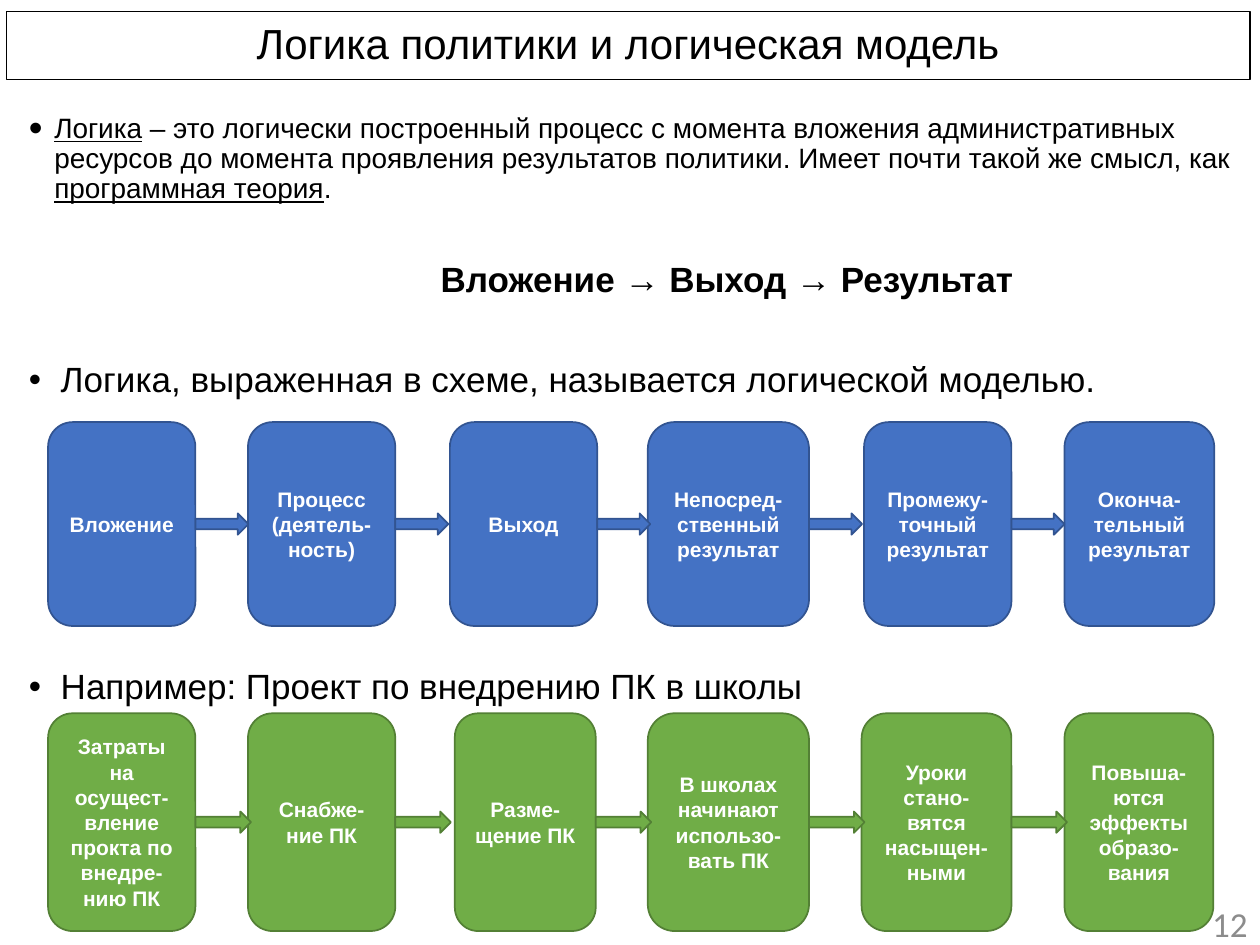
from dataclasses import dataclass
from itertools import pairwise

from lxml.etree import SubElement
from pptx import Presentation
from pptx.dml.color import RGBColor
from pptx.enum.shapes import MSO_SHAPE as Shape
from pptx.enum.text import MSO_ANCHOR as Anchor, MSO_AUTO_SIZE as AutoSize, PP_ALIGN as Align
from pptx.oxml.ns import qn
from pptx.util import Cm, Pt


@dataclass(frozen=True)
class Theme:
    text: str = "000000"
    on_card: str = "FFFFFF"
    page_number: str = "8C8C8C"
    blue: str = "4472C4"
    blue_edge: str = "325491"
    green: str = "70AD47"
    green_edge: str = "538035"
    font: str = "Arial"
    number_font: str = "Calibri"
    title_size: int = 24
    heading_size: int = 20
    definition_size: int = 16
    card_size: int = 12
    line_spacing: float = 0.9


@dataclass(frozen=True)
class Card:
    label: str
    left: float
    width: float = 2.97


@dataclass(frozen=True)
class Chain:
    """A row of cards joined by block arrows; lengths in centimetres."""
    top: float
    height: float
    fill: str
    edge: str
    arrow_width: float
    cards: tuple[Card, ...]


THEME = Theme()
ARROW_HEIGHT = 0.43

MODEL = Chain(8.51, 4.11, THEME.blue, THEME.blue_edge, 1.07, (
    Card("Вложение", 0.97),
    Card("Процесс\n(деятель-\nность)", 5),
    Card("Выход", 9.07),
    Card("Непосред-ственный результат", 13.06, 3.25),
    Card("Промежу-точный результат", 17.42),
    Card("Оконча-тельный результат", 21.46, 3.02),
))
EXAMPLE = Chain(14.38, 4.39, THEME.green, THEME.green_edge, 1.12, (
    Card("Затраты на осущест-вление прокта по внедре-нию ПК", 0.97),
    Card("Снабже-ние ПК", 5),
    Card("Разме-щение ПК", 9.17, 2.84),
    Card("В школах начинают использо-вать ПК", 13.06, 3.25),
    Card("Уроки стано-вятся насыщен-ными", 17.37, 3.02),
    Card("Повыша-ются эффекты образо-вания", 21.46, 3),
))
DEFINITION = (
    ("Логика", True),
    (" – это логически построенный процесс с момента вложения административных "
     "ресурсов до момента проявления результатов политики. "
     "Имеет почти такой же смысл, как ", False),
    ("программная теория", True),
    (".", False),
)


def add_text(paragraph, text: str, *, size: int, color: str = THEME.text,
             font: str = THEME.font, bold: bool = False, underline: bool = False) -> None:
    for index, line in enumerate(text.split("\n")):
        if index:
            paragraph.add_line_break()
        run = paragraph.add_run()
        run.text = line
        run.font.size = Pt(size)
        run.font.name = font
        run.font.bold = bold
        run.font.underline = underline
        run.font.color.rgb = RGBColor.from_string(color)


def place(shape, left: float, top: float, width: float, height: float) -> None:
    shape.left, shape.top, shape.width, shape.height = map(Cm, (left, top, width, height))


def set_layout(paragraph, *, before: float = 0, left: float = 0, hanging: float = 0,
               bullet_percent: int = 0) -> None:
    """Set spacing and indents; a bullet is shown when bullet_percent is not zero."""
    paragraph.line_spacing = THEME.line_spacing
    paragraph.space_before = Pt(before)
    properties = paragraph._p.get_or_add_pPr()
    properties.set("marL", str(Cm(left)))
    properties.set("indent", str(-Cm(hanging)))
    if bullet_percent:
        SubElement(properties, qn("a:buSzPct"), val=str(bullet_percent * 1000))
        SubElement(properties, qn("a:buFont"), typeface=THEME.font)
        SubElement(properties, qn("a:buChar"), char="•")
    else:
        SubElement(properties, qn("a:buNone"))


def add_block(slide, kind: Shape, chain: Chain, left: float, width: float, height: float):
    """Add a shape in the chain's colours, centred on the chain's axis."""
    top = chain.top + (chain.height - height) / 2
    block = slide.shapes.add_shape(kind, *map(Cm, (left, top, width, height)))
    block.shadow.inherit = False
    block.fill.solid()
    block.fill.fore_color.rgb = RGBColor.from_string(chain.fill)
    block.line.color.rgb = RGBColor.from_string(chain.edge)
    block.line.width = Pt(1)
    return block


def draw_chain(slide, chain: Chain) -> None:
    for card in chain.cards:
        block = add_block(slide, Shape.ROUNDED_RECTANGLE, chain,
                          card.left, card.width, chain.height)
        frame = block.text_frame
        frame.word_wrap = True
        frame.vertical_anchor = Anchor.MIDDLE
        label = frame.paragraphs[0]
        label.alignment = Align.CENTER
        add_text(label, card.label, size=THEME.card_size, color=THEME.on_card, bold=True)
    for card, _ in pairwise(chain.cards):
        add_block(slide, Shape.RIGHT_ARROW, chain,
                  card.left + card.width, chain.arrow_width, ARROW_HEIGHT)


def fill_title(title) -> None:
    place(title, 0.13, 0.23, 25.07, 1.37)
    title.line.color.rgb = RGBColor.from_string(THEME.text)
    title.line.width = Pt(0.75)
    frame = title.text_frame
    frame.auto_size = AutoSize.NONE
    frame.vertical_anchor = Anchor.MIDDLE
    heading = frame.paragraphs[0]
    heading.alignment = Align.CENTER
    heading.line_spacing = THEME.line_spacing
    add_text(heading, "Логика политики и логическая модель", size=THEME.title_size)


def fill_body(body) -> None:
    place(body, 0.33, 1.93, 25.07, 15.7)
    frame = body.text_frame
    frame.auto_size = AutoSize.NONE
    frame.margin_top = Cm(0.37)

    definition = frame.paragraphs[0]
    set_layout(definition, left=0.51, hanging=0.51, bullet_percent=140)
    for text, underline in DEFINITION:
        add_text(definition, text, size=THEME.definition_size, underline=underline)

    formula = frame.add_paragraph()
    formula.alignment = Align.CENTER
    set_layout(formula, before=33, left=3.58)
    add_text(formula, "Вложение → Выход → Результат", size=THEME.heading_size, bold=True)

    for text, before in (
        ("Логика, выраженная в схеме, называется логической моделью.", 35.5),
        ("Например: Проект по внедрению ПК в школы", 154),
    ):
        heading = frame.add_paragraph()
        set_layout(heading, before=before, left=0.64, hanging=0.64, bullet_percent=100)
        add_text(heading, text, size=THEME.heading_size)


def add_page_number(slide) -> None:
    box = slide.shapes.add_textbox(*map(Cm, (19.48, 18.08, 5.92, 1.07)))
    frame = box.text_frame
    frame.word_wrap = True
    frame.vertical_anchor = Anchor.MIDDLE
    number = frame.paragraphs[0]
    number.alignment = Align.RIGHT
    add_text(number, "12", size=THEME.heading_size, color=THEME.page_number,
             font=THEME.number_font)


def main() -> None:
    deck = Presentation()
    deck.slide_width, deck.slide_height = Cm(25.4), Cm(19.05)
    slide = deck.slides.add_slide(deck.slide_layouts[1])
    fill_title(slide.shapes.title)
    fill_body(slide.placeholders[1])
    add_page_number(slide)
    for chain in (MODEL, EXAMPLE):
        draw_chain(slide, chain)
    deck.save("out.pptx")


if __name__ == "__main__":
    main()
